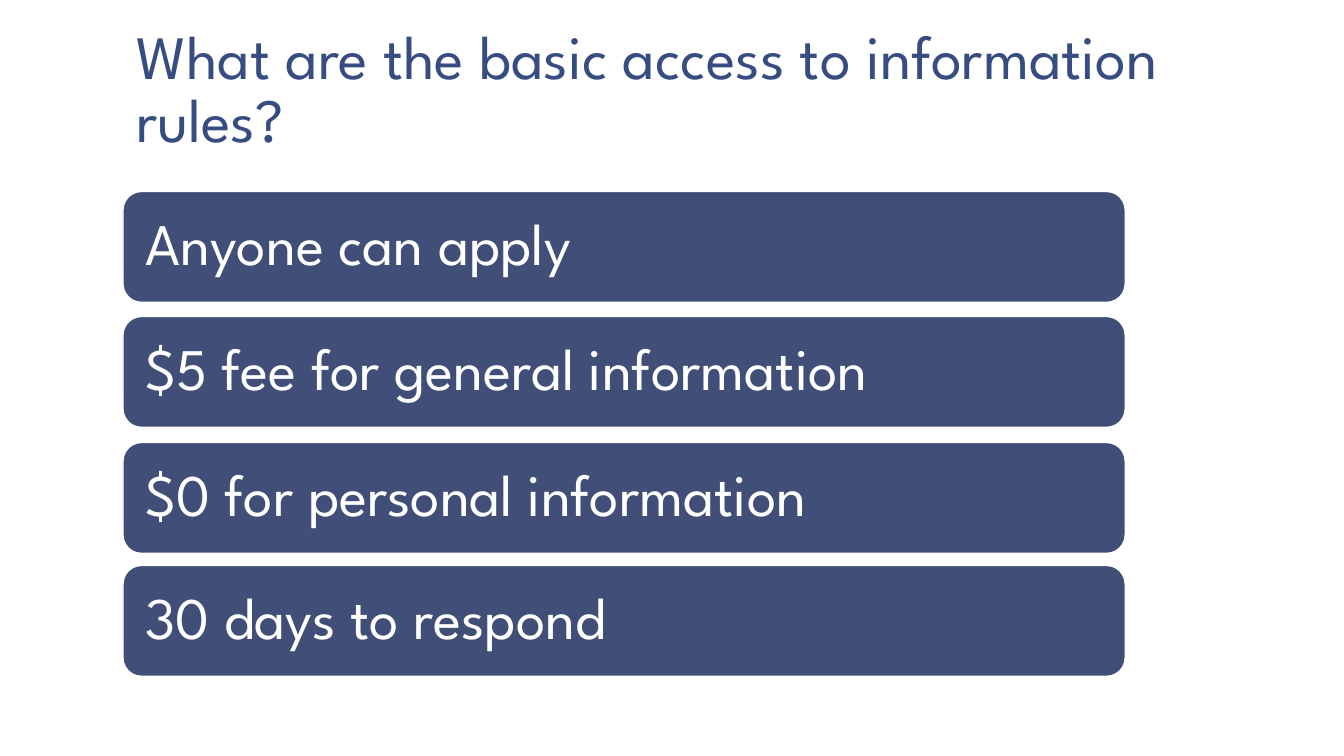
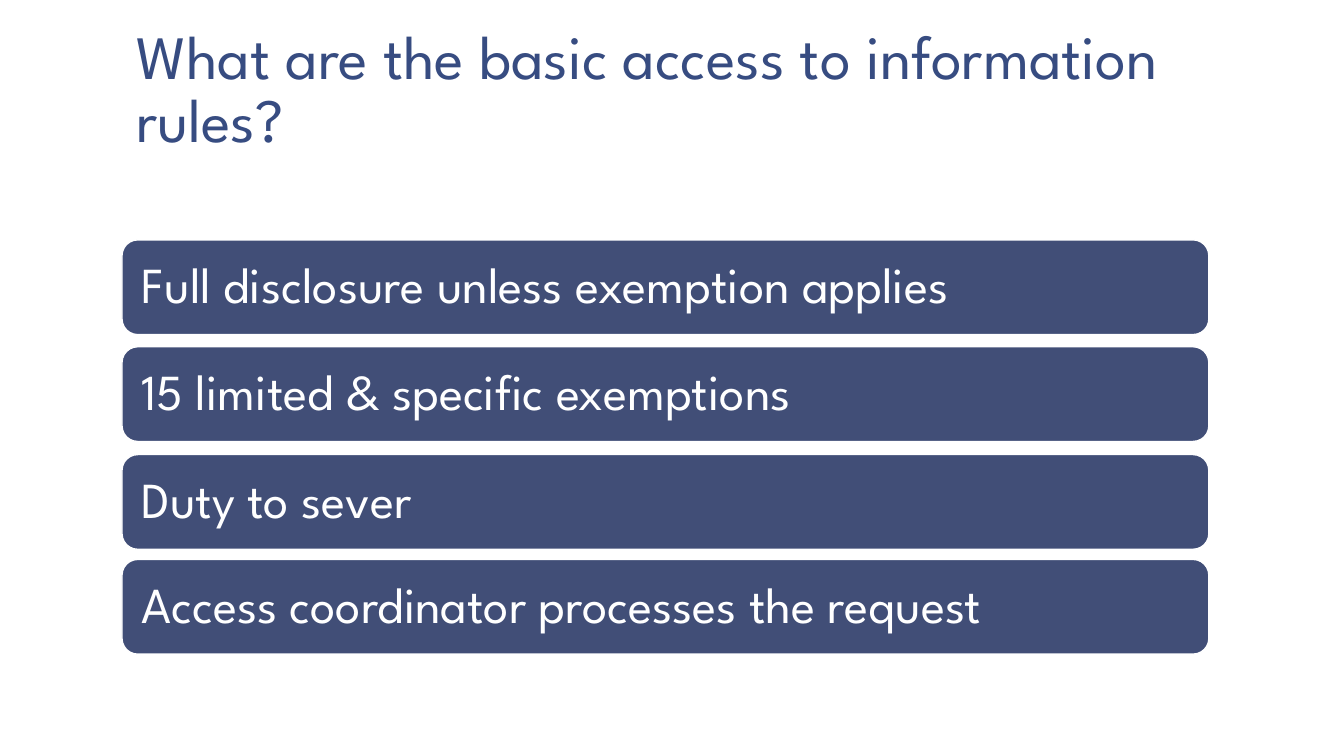
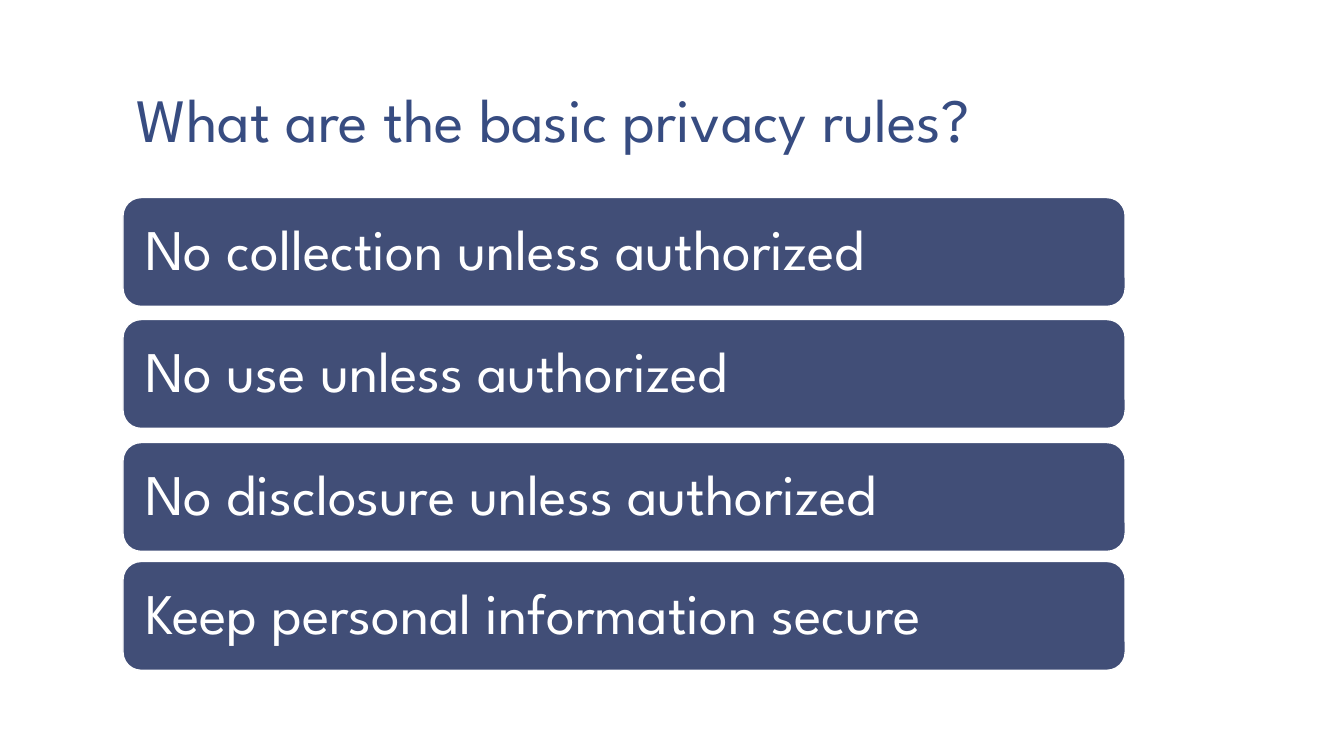
from pptx import Presentation
from pptx import util as u
from pptx.dml.color import RGBColor
from pptx.enum import shapes, text

PX = 9144
FONT = "League Spartan"
COLOURS = {"title": "374C81", "bar": "414E77", "white": "FFFFFF"}

SLIDES = [
    {
        "title": "What are the basic access to information rules?",
        "left": 122, "width": 994, "height": 110, "inset": 17, "size": 42,
        "bars": [
            (190, "Anyone can apply"),
            (314, "$5 fee for general information"),
            (439, "$0 for personal information"),
            (561, "30 days to respond"),
        ],
    },
    {
        "title": "What are the basic access to information rules?",
        "left": 121, "width": 1078, "height": 94, "inset": 15, "size": 36,
        "bars": [
            (238, "Full disclosure unless exemption applies"),
            (344, "15 limited & specific exemptions"),
            (451, "Duty to sever"),
            (555, "Access coordinator processes the request"),
        ],
    },
    {
        "title": "What are the basic privacy rules?",
        "left": 122, "width": 994, "height": 108, "inset": 17, "size": 41,
        "bars": [
            (196, "No collection unless authorized"),
            (317, "No use unless authorized"),
            (439, "No disclosure unless authorized"),
            (557, "Keep personal information secure"),
        ],
    },
]


def colour(name):
    return RGBColor.from_string(COLOURS[name])


def write(box, words, size, colour_name, spacing, anchor, inset_x, inset_y):
    frame = box.text_frame
    frame.word_wrap = True
    frame.vertical_anchor = anchor
    frame.margin_left = frame.margin_right = inset_x * PX
    frame.margin_top = frame.margin_bottom = inset_y * PX
    para = frame.paragraphs[0]
    para.alignment = text.PP_ALIGN.LEFT
    para.line_spacing = spacing
    span = para.add_run()
    span.text = words
    span.font.name = FONT
    span.font.size = u.Pt(size)
    span.font.color.rgb = colour(colour_name)


deck = Presentation()
deck.slide_width = 1333 * PX
deck.slide_height = 750 * PX

for content in SLIDES:
    page = deck.slides.add_slide(deck.slide_layouts[6])
    page.background.fill.solid()
    page.background.fill.fore_color.rgb = colour("white")

    title = page.shapes.add_textbox(122 * PX, 8 * PX, 1111 * PX, 153 * PX)
    write(title, content["title"], 44, "title", 0.85,
          text.MSO_ANCHOR.BOTTOM, 13, 7)

    for top, words in content["bars"]:
        bar = page.shapes.add_shape(
            shapes.MSO_SHAPE.ROUNDED_RECTANGLE,
            content["left"] * PX, top * PX,
            content["width"] * PX, content["height"] * PX)
        bar.shadow.inherit = False
        bar.fill.solid()
        bar.fill.fore_color.rgb = colour("bar")
        bar.line.color.rgb = colour("white")
        bar.line.width = u.Pt(1)
        write(bar, words, content["size"], "white", 0.9,
              text.MSO_ANCHOR.MIDDLE, content["inset"], content["inset"])

deck.save("out.pptx")
